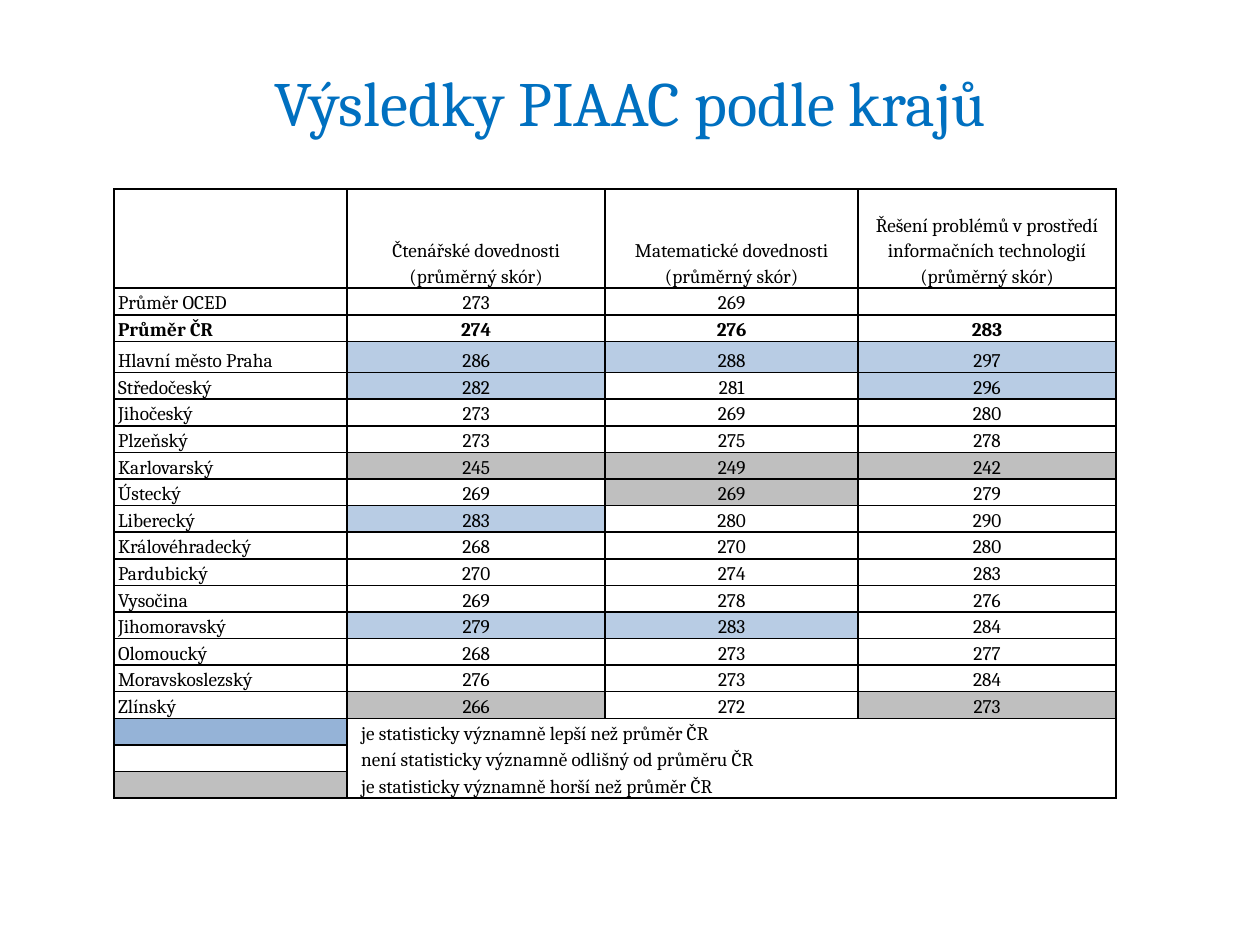
from dataclasses import dataclass

from lxml import etree
from pptx import Presentation
from pptx.dml.color import RGBColor
from pptx.enum.text import MSO_ANCHOR, PP_ALIGN
from pptx.oxml.ns import qn
from pptx.util import Cm, Pt

LEFT, CENTER = PP_ALIGN.LEFT, PP_ALIGN.CENTER
MIDDLE, BOTTOM = MSO_ANCHOR.MIDDLE, MSO_ANCHOR.BOTTOM


@dataclass(frozen=True)
class Theme:
    """Colours, font and type sizes of the slide."""
    font: str = "Cambria"
    title_size: int = 36
    table_size: int = 11
    title: str = "0070C0"
    text: str = "000000"
    border: str = "000000"
    plain: str = "FFFFFF"
    better: str = "B8CCE4"
    worse: str = "BFBFBF"
    better_key: str = "95B3D7"


THEME = Theme()
STATUS_FILLS = {"+": THEME.better, "=": THEME.plain, "-": THEME.worse}

HEADERS = (
    "",
    "Čtenářské dovednosti (průměrný skór)",
    "Matematické dovednosti (průměrný skór)",
    "Řešení problémů v prostředí informačních technologií (průměrný skór)",
)
AVERAGE = "Průměr ČR"
CAPITAL = "Hlavní město Praha"
SCORES = (
    ("Průměr OCED", (273, 269, ""), "==="),
    (AVERAGE, (274, 276, 283), "==="),
    (CAPITAL, (286, 288, 297), "+++"),
    ("Středočeský", (282, 281, 296), "+=+"),
    ("Jihočeský", (273, 269, 280), "==="),
    ("Plzeňský", (273, 275, 278), "==="),
    ("Karlovarský", (245, 249, 242), "---"),
    ("Ústecký", (269, 269, 279), "=-="),
    ("Liberecký", (283, 280, 290), "+=="),
    ("Královéhradecký", (268, 270, 280), "==="),
    ("Pardubický", (270, 274, 283), "==="),
    ("Vysočina", (269, 278, 276), "==="),
    ("Jihomoravský", (279, 283, 284), "++="),
    ("Olomoucký", (268, 273, 277), "==="),
    ("Moravskoslezský", (276, 273, 284), "==="),
    ("Zlínský", (266, 272, 273), "-=-"),
)
LEGEND = (
    (THEME.better_key, "je statisticky významně lepší než průměr ČR"),
    (THEME.plain, "není statisticky významně odlišný od průměru ČR"),
    (THEME.worse, "je statisticky významně horší než průměr ČR"),
)
COLUMN_WIDTHS = (4.7, 5.2, 5.1, 5.2)
HEADER_HEIGHT, CAPITAL_HEIGHT, ROW_HEIGHT = 2, 0.63, 0.52


def apply_format(target, values):
    """Set each named attribute on the target."""
    for name, value in values.items():
        setattr(target, name, value)


def write_text(paragraph, text, size, color, bold=False):
    """Add one formatted run, or size the empty paragraph."""
    if not text:
        end = etree.SubElement(paragraph._p, qn("a:endParaRPr"))
        end.set("sz", str(size * 100))
        return
    run = paragraph.add_run()
    run.text = text
    apply_format(run.font, {"name": THEME.font, "size": Pt(size), "bold": bold})
    run.font.color.rgb = RGBColor.from_string(color)


def add_title(slide, text):
    """Add the centred slide title."""
    shape = slide.shapes.add_textbox(Cm(1.27), Cm(0.76), Cm(22.86), Cm(2.57))
    frame = shape.text_frame
    apply_format(frame, {"word_wrap": True, "vertical_anchor": MIDDLE})
    paragraph = frame.paragraphs[0]
    paragraph.alignment = CENTER
    write_text(paragraph, text, THEME.title_size, THEME.title)


def set_borders(cell, sides):
    """Draw the named sides of a cell and clear the others."""
    properties = cell._tc.get_or_add_tcPr()
    for side in "LRTB":
        line = etree.SubElement(properties, qn(f"a:ln{side}"), w=str(Pt(1)))
        if side in sides:
            fill = etree.SubElement(line, qn("a:solidFill"))
            etree.SubElement(fill, qn("a:srgbClr"), val=THEME.border)
        else:
            etree.SubElement(line, qn("a:noFill"))


def fill_cell(cell, text="", align=LEFT, fill=THEME.plain, bold=False,
              sides="LRTB", indent=0.08):
    """Write and format one table cell."""
    apply_format(cell, {
        "margin_left": Cm(indent), "margin_right": Cm(0.08),
        "margin_top": 0, "margin_bottom": 0, "vertical_anchor": BOTTOM,
    })
    set_borders(cell, sides)
    cell.fill.solid()
    cell.fill.fore_color.rgb = RGBColor.from_string(fill)
    paragraph = cell.text_frame.paragraphs[0]
    apply_format(paragraph, {"alignment": align, "line_spacing": 1.15})
    write_text(paragraph, text, THEME.table_size, THEME.text, bold)


def fill_legend(table, first_row):
    """Write the colour key in the last rows of the table."""
    for index, (color, text) in enumerate(LEGEND):
        row = first_row + index
        edges = "T" * (index == 0) + "B" * (index == len(LEGEND) - 1)
        fill_cell(table.cell(row, 0), fill=color)
        table.cell(row, 1).merge(table.cell(row, 3))
        fill_cell(table.cell(row, 1), text, sides="LR" + edges, indent=0.28)
        fill_cell(table.cell(row, 2), sides=edges)
        fill_cell(table.cell(row, 3), sides="R" + edges)


def add_score_table(slide):
    """Add the table of regional scores with its colour key."""
    heights = [HEADER_HEIGHT]
    heights += [CAPITAL_HEIGHT if name == CAPITAL else ROW_HEIGHT
                for name, _, _ in SCORES]
    heights += [ROW_HEIGHT] * len(LEGEND)
    table = slide.shapes.add_table(
        len(heights), len(COLUMN_WIDTHS), Cm(2.3), Cm(3.81),
        Cm(sum(COLUMN_WIDTHS)), Cm(sum(heights))).table
    apply_format(table, {"first_row": False, "horz_banding": False})
    for column, width in zip(table.columns, COLUMN_WIDTHS):
        column.width = Cm(width)
    for row, height in zip(table.rows, heights):
        row.height = Cm(height)
    for column, text in enumerate(HEADERS):
        fill_cell(table.cell(0, column), text, CENTER)
    for row, (name, scores, statuses) in enumerate(SCORES, 1):
        bold = name == AVERAGE
        fill_cell(table.cell(row, 0), name, bold=bold)
        for column, (score, status) in enumerate(zip(scores, statuses), 1):
            fill_cell(table.cell(row, column), str(score), CENTER,
                      STATUS_FILLS[status], bold)
    fill_legend(table, len(SCORES) + 1)


def main():
    """Build and save the slide."""
    presentation = Presentation()
    apply_format(presentation, {"slide_width": Cm(25.4), "slide_height": Cm(19.05)})
    slide = presentation.slides.add_slide(presentation.slide_layouts[6])
    add_title(slide, "Výsledky PIAAC podle krajů")
    add_score_table(slide)
    presentation.save("out.pptx")


if __name__ == "__main__":
    main()
